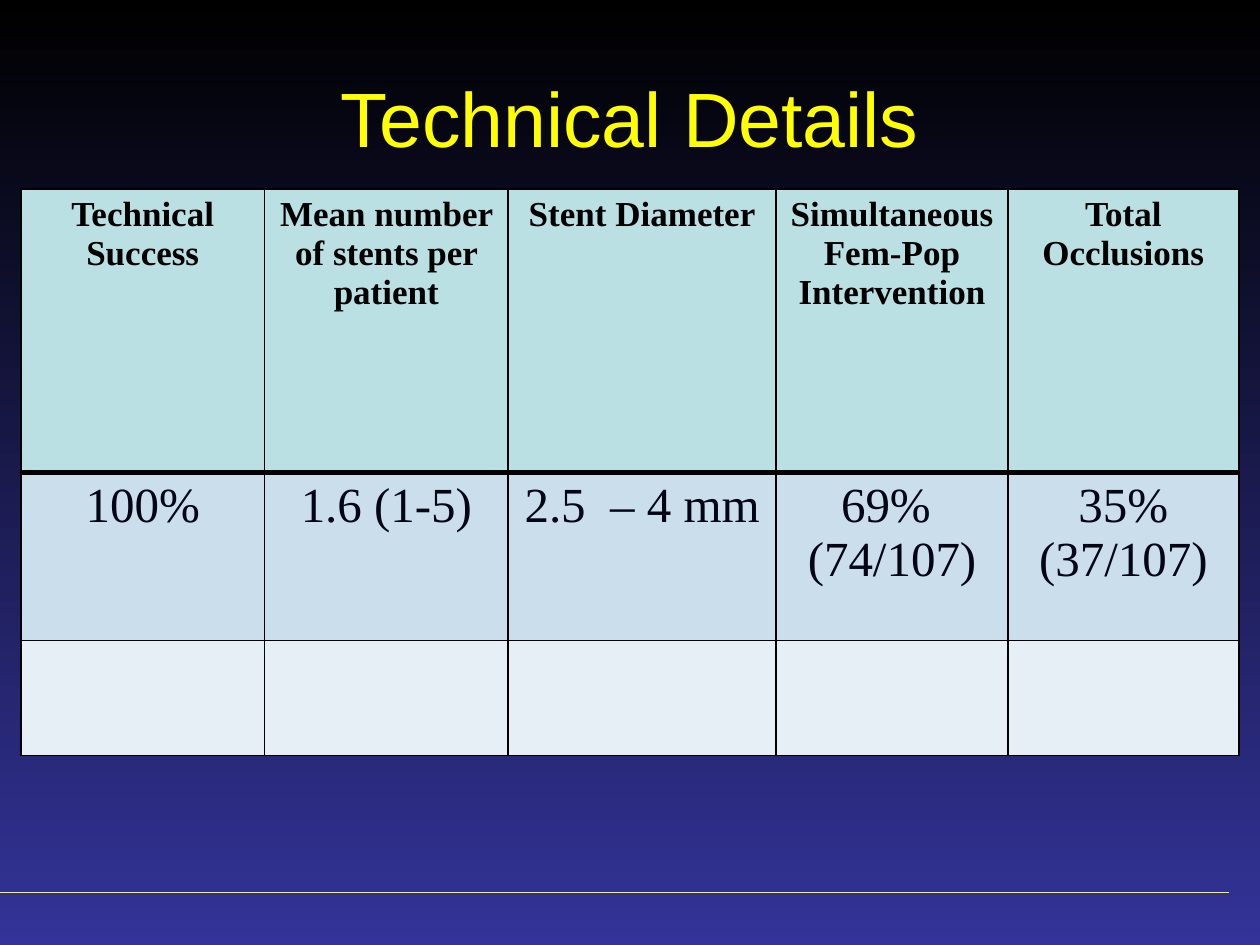
from lxml import etree
from pptx import Presentation, util as u
from pptx.dml.color import RGBColor
from pptx.enum import shapes, text
from pptx.oxml import parse_xml
from pptx.oxml.ns import qn, nsdecls

Pt = u.Pt
HUES = {
    "top": "000000", "base": "333399", "gold": "FFFF00", "ink": "000000",
    "navy": "000514", "head": "BBE0E3", "body": "CBDEEC", "pale": "E7EFF6",
}


def hue(name):
    return RGBColor.from_string(HUES[name])


def write(frame, words, size=20, font="Times New Roman", color="ink", bold=False):
    """Fill a text frame with centred lines, one paragraph each."""
    for i, line in enumerate(words.split("\n")):
        para = frame.paragraphs[0] if i == 0 else frame.add_paragraph()
        para.alignment = text.PP_ALIGN.CENTER
        run = para.add_run()
        run.text = line
        run.font.size, run.font.name, run.font.bold = Pt(size), font, bold
        run.font.color.rgb = hue(color)


class Deck:
    def __init__(self, wide, high):
        self.show = Presentation()
        self.show.slide_width, self.show.slide_height = Pt(wide), Pt(high)
        self.slide = self.show.slides.add_slide(self.show.slide_layouts[6])

    def back(self, top, base):
        fill = self.slide.background.fill
        fill.gradient()
        fill.gradient_angle = 270
        for stop, name, pos in zip(fill.gradient_stops, (top, base), (0, 1)):
            stop.color.rgb = hue(name)
            stop.position = pos

    def rule(self, x1, y1, x2, y2, color, width):
        line = self.slide.shapes.add_connector(
            shapes.MSO_CONNECTOR.STRAIGHT, Pt(x1), Pt(y1), Pt(x2), Pt(y2))
        line.line.color.rgb = hue(color)
        line.line.width = Pt(width)
        etree.SubElement(line._element.spPr, qn("a:effectLst"))

    def label(self, x, y, wide, high, words, **style):
        frame = self.slide.shapes.add_textbox(
            Pt(x), Pt(y), Pt(wide), Pt(high)).text_frame
        frame.word_wrap = True
        frame.vertical_anchor = text.MSO_ANCHOR.MIDDLE
        write(frame, words, **style)

    def edge(self, cell, **widths):
        """Draw cell borders; sides must come in the order L, R, T, B."""
        props = cell._tc.get_or_add_tcPr()
        for i, (side, width) in enumerate(widths.items()):
            props.insert(i, parse_xml(
                f'<a:ln{side} {nsdecls("a")} w="{Pt(width)}"><a:solidFill>'
                f'<a:srgbClr val="{HUES["ink"]}"/></a:solidFill></a:ln{side}>'))

    def table(self, x, y, cols, rows, data, fills, styles, rules):
        grid = self.slide.shapes.add_table(
            len(rows), len(cols), Pt(x), Pt(y), Pt(sum(cols)), Pt(sum(rows))).table
        for col, wide in zip(grid.columns, cols):
            col.width = Pt(wide)
        for r, high in enumerate(rows):
            grid.rows[r].height = Pt(high)
            for c, words in enumerate(data[r]):
                cell = grid.cell(r, c)
                cell.fill.solid()
                cell.fill.fore_color.rgb = hue(fills[r])
                self.edge(cell, L=1, R=1, T=rules[r], B=rules[r + 1])
                if words:
                    write(cell.text_frame, words, **styles[r])


def main():
    deck = Deck(720, 540)
    deck.back("top", "base")

    # Footer rule and title
    deck.rule(0, 510, 702, 510, "gold", 0.75)
    deck.label(36, 21.6, 648, 90, "Technical Details",
               size=44, font="Arial", color="gold")

    # Results table
    data = [
        ["Technical Success", "Mean number of stents per patient", "Stent Diameter",
         "Simultaneous Fem-Pop Intervention", "Total Occlusions"],
        ["100%", "1.6 (1-5)", "2.5  – 4 mm", "69% \n(74/107)", "35% (37/107)"],
        [""] * 5,
    ]
    deck.table(12, 108, [139.2, 139.2, 153.2, 132.4, 132], [162, 96, 65.75], data,
               fills=["head", "body", "pale"],
               styles=[{"bold": True}, {"size": 28, "color": "navy"}, {}],
               rules=[1, 3, 1, 1])

    deck.show.save("out.pptx")


if __name__ == "__main__":
    main()
